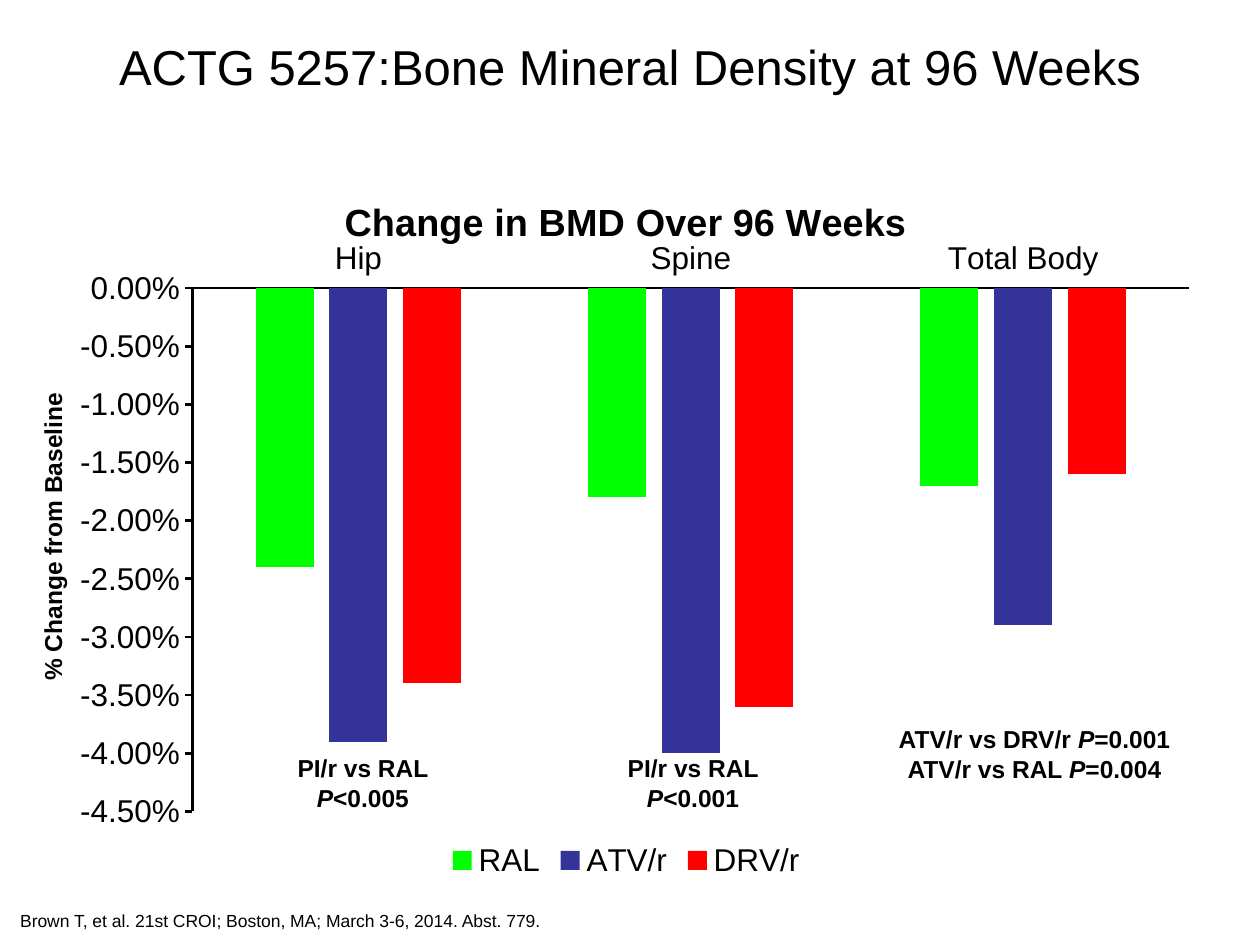
from lxml.etree import SubElement
from pptx import Presentation
from pptx.chart.data import CategoryChartData
from pptx.dml.color import RGBColor
from pptx.enum.chart import (XL_CHART_TYPE, XL_LEGEND_POSITION,
                             XL_TICK_LABEL_POSITION, XL_TICK_MARK)
from pptx.enum.text import MSO_ANCHOR, PP_ALIGN
from pptx.oxml.ns import qn
from pptx.util import Inches, Pt

FONT = "Arial"
BLACK = RGBColor(0, 0, 0)
GREEN = RGBColor(0, 255, 0)
NAVY = RGBColor(0x33, 0x33, 0x99)
RED = RGBColor(255, 0, 0)

SITES = ["Hip", "Spine", "Total Body"]
ARMS = [
    ("RAL", GREEN, [-0.024, -0.018, -0.017]),
    ("ATV/r", NAVY, [-0.039, -0.04, -0.029]),
    ("DRV/r", RED, [-0.034, -0.036, -0.016]),
]
# Left, top, width and text of each note; "P" stands alone to be italic.
NOTES = [
    (2.02, 5.93, 1.72, ["PI/r vs RAL ", "P", "<0.005"]),
    (4.64, 5.93, 1.72, ["PI/r vs RAL ", "P", "<0.001"]),
    (6.94, 5.7, 2.54,
     ["ATV/r vs DRV/r ", "P", "=0.001 ATV/r vs RAL ", "P", "=0.004"]),
]


def style(font, size, bold=False):
    font.name = FONT
    font.size = Pt(size)
    font.bold = bold
    font.color.rgb = BLACK


def add_text(slide, box, parts, size, bold=False, align=PP_ALIGN.CENTER,
             anchor=MSO_ANCHOR.TOP):
    shape = slide.shapes.add_textbox(*map(Inches, box))
    frame = shape.text_frame
    frame.word_wrap = True
    frame.vertical_anchor = anchor
    para = frame.paragraphs[0]
    para.alignment = align
    style(para.font, size, bold)
    for part in parts:
        run = para.add_run()
        run.text = part
        if part == "P":
            run.font.italic = True
    return shape


def set_layout(parent, values, inner=False):
    """Place a chart part by fractions of the chart area."""
    layout = parent.find(qn("c:layout"))
    if layout is None:
        layout = SubElement(parent, qn("c:layout"))
        parent.remove(layout)
        has_text = parent.find(qn("c:tx")) is not None
        parent.insert(1 if has_text else 0, layout)
    for child in list(layout):
        layout.remove(child)
    manual = SubElement(layout, qn("c:manualLayout"))
    pairs = [("layoutTarget", "inner")] if inner else []
    pairs += [("xMode", "edge"), ("yMode", "edge")]
    pairs += zip("xywh", values)
    for tag, value in pairs:
        SubElement(manual, qn("c:" + tag)).set("val", str(value))


def style_axis(axis, mark):
    axis.has_major_gridlines = False
    axis.major_tick_mark = mark
    axis.minor_tick_mark = XL_TICK_MARK.NONE
    axis.format.line.color.rgb = BLACK
    axis.format.line.width = Pt(1.5)


def add_bars(slide):
    data = CategoryChartData(number_format="0.00%")
    data.categories = SITES
    for name, _, values in ARMS:
        data.add_series(name, values)
    box = map(Inches, (0.39, 1.29, 9.16, 5.73))
    chart = slide.shapes.add_chart(
        XL_CHART_TYPE.COLUMN_CLUSTERED, *box, data).chart
    style(chart.font, 18)

    title = chart.chart_title
    title.text_frame.text = "Change in BMD Over 96 Weeks"
    style(title.text_frame.paragraphs[0].font, 21.6, True)
    set_layout(title._element, (0.25, 0.04))
    set_layout(chart._chartSpace.chart.plotArea,
               (0.124, 0.174, 0.864, 0.725), inner=True)

    chart.has_legend = True
    chart.legend.position = XL_LEGEND_POSITION.BOTTOM
    chart.legend.include_in_layout = False

    style_axis(chart.category_axis, XL_TICK_MARK.NONE)
    chart.category_axis.tick_label_position = XL_TICK_LABEL_POSITION.HIGH
    scale = chart.value_axis
    style_axis(scale, XL_TICK_MARK.OUTSIDE)
    scale.minimum_scale, scale.maximum_scale = -0.045, 0
    scale.major_unit = 0.005
    scale.tick_labels.number_format = "0.00%"
    scale.tick_labels.number_format_is_linked = False

    plot = chart.plots[0]
    plot.gap_width, plot.overlap = 219, -27
    plot.vary_by_categories = False
    for bars, (_, color, _) in zip(plot.series, ARMS):
        bars.invert_if_negative = False
        bars.format.fill.solid()
        bars.format.fill.fore_color.rgb = color


def main():
    deck = Presentation()
    deck.slide_width, deck.slide_height = Inches(10), Inches(7.5)
    slide = deck.slides.add_slide(deck.slide_layouts[6])
    add_text(slide, (0.5, 0, 9, 1.04),
             ["ACTG 5257:Bone Mineral Density at 96 Weeks"], 28,
             anchor=MSO_ANCHOR.MIDDLE)
    add_bars(slide)
    source = add_text(
        slide, (0.16, 7.04, 9.32, 0.4),
        ["Brown T, et al. 21st CROI; Boston, MA; March 3-6, 2014. Abst. 779."],
        10, align=PP_ALIGN.LEFT, anchor=MSO_ANCHOR.BOTTOM)
    source.text_frame.margin_left = 0
    for left, top, width, parts in NOTES:
        add_text(slide, (left, top, width, 0.57), parts, 14, True)
    label = add_text(slide, (-0.83, 4.09, 2.5, 0.34),
                     ["% Change from Baseline"], 14, True)
    label.text_frame.word_wrap = False
    label.rotation = 270
    deck.save("out.pptx")


if __name__ == "__main__":
    main()
